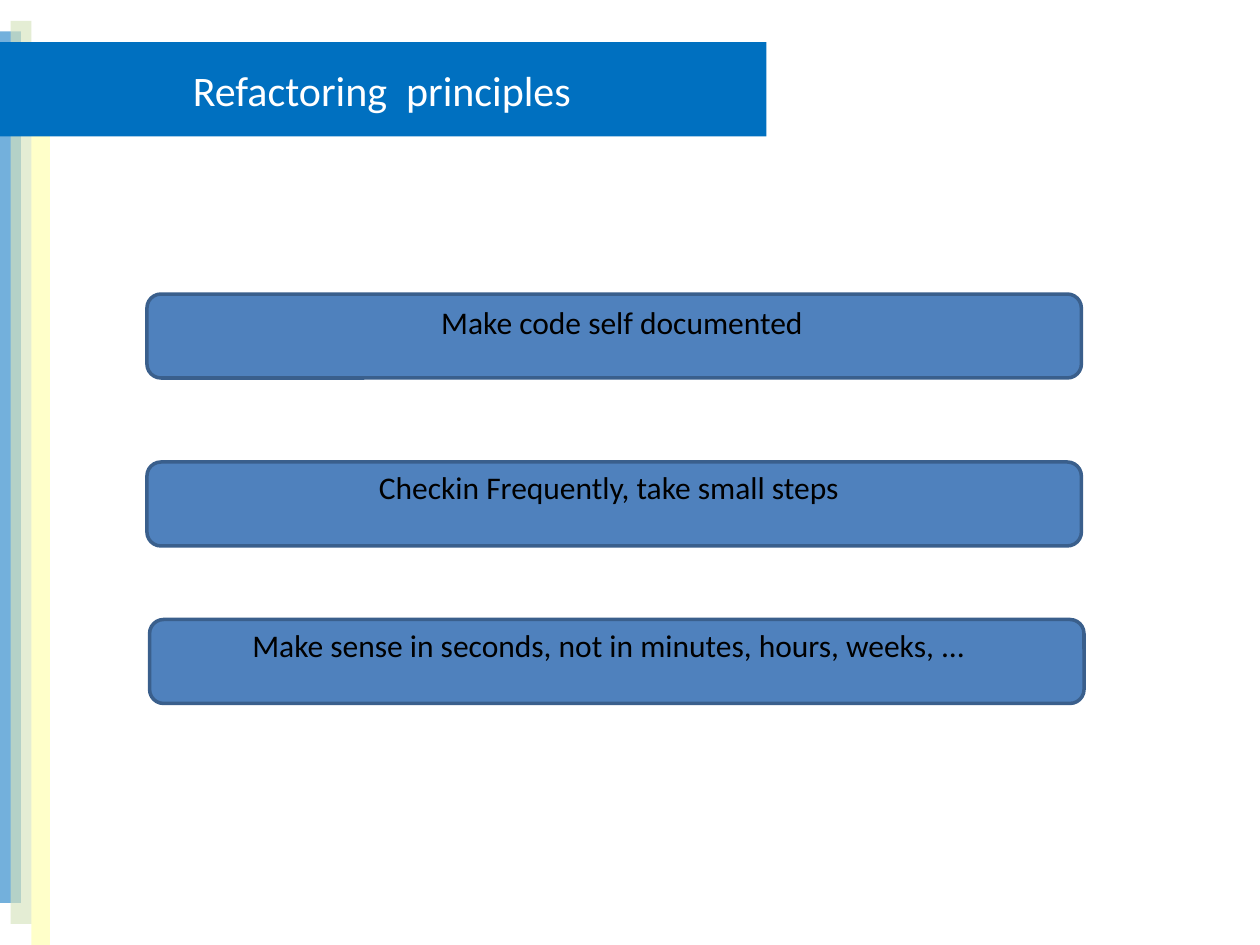
from lxml import etree
from pptx import Presentation
from pptx import util as u
from pptx.dml.color import RGBColor
from pptx.enum import shapes, text
from pptx.oxml.ns import qn

COLORS = {"blue": "0070C0", "green": "D7E4BD", "yellow": "FFFF00",
          "panel": "4F81BD", "edge": "3A5F8C", "white": "FFFFFF", "black": "000000"}
COLS, ROWS = 120, 90
W, H = u.Inches(10), u.Inches(7.5)
RECT = shapes.MSO_SHAPE.RECTANGLE
ROUND = shapes.MSO_SHAPE.ROUNDED_RECTANGLE


def rgb(name):
    return RGBColor.from_string(COLORS[name])


def place(box):
    x, y, w, h = box
    return [round(v) for v in (x * W / COLS, y * H / ROWS, w * W / COLS, h * H / ROWS)]


def add_block(parent, kind, box, fill, alpha=None, edge=None):
    sp = parent.add_shape(kind, *place(box))
    sp.shadow.inherit = False
    sp.fill.solid()
    sp.fill.fore_color.rgb = rgb(fill)
    if alpha:
        clr = sp._element.spPr.find(qn("a:solidFill"))[0]
        etree.SubElement(clr, qn("a:alpha")).set("val", str(alpha * 1000))
    if edge:
        sp.line.color.rgb = rgb(edge)
        sp.line.width = u.Pt(2)
    else:
        sp.line.fill.background()
    return sp


def write(sp, words, size, color, anchor):
    tf = sp.text_frame
    tf.word_wrap = True
    tf.vertical_anchor = anchor
    p = tf.paragraphs[0]
    p.alignment = text.PP_ALIGN.CENTER
    r = p.add_run()
    r.text = words
    for name, value in {"name": "Calibri", "size": u.Pt(size)}.items():
        setattr(r.font, name, value)
    r.font.color.rgb = rgb(color)


def side_bars(s, box):
    x, y, w, h = box
    bars = [(0, 1, 2, h - 5, "blue", 55),
            (1, 0, 2, h - 2, "green", 65),
            (3, 2, 1.75, h - 2, "yellow", 21)]
    for dx, dy, bw, bh, fill, alpha in bars:
        add_block(s.shapes, RECT, (x + dx, y + dy, bw, bh), fill, alpha)


def title_banner(s, box, words):
    sp = add_block(s.shapes, RECT, box, "blue")
    write(sp, words, 24, "white", text.MSO_ANCHOR.MIDDLE)


def principle(s, box, words, shift):
    x, y, w, h = box
    dx, dy = shift
    grp = s.shapes.add_group_shape()
    add_block(grp.shapes, ROUND, box, "panel", edge="edge")
    label = grp.shapes.add_textbox(*place((x + dx, y + dy, w + 1, 0.6 * h)))
    write(label, words, 18, "black", text.MSO_ANCHOR.TOP)
    label.text_frame.auto_size = text.MSO_AUTO_SIZE.SHAPE_TO_FIT_TEXT


def main():
    prs = Presentation()
    prs.slide_width, prs.slide_height = W, H
    s = prs.slides.add_slide(prs.slide_layouts[6])
    side_bars(s, (0, 2, 4.75, 88))
    title_banner(s, (-0.25, 4, 73.25, 9), "Refactoring  principles")
    principles = [
        (14, 28, "Make code self documented", (0.25, 0.25)),
        (14, 44, "Checkin Frequently, take small steps", (-1, 0)),
        (14.25, 59, "Make sense in seconds, not in minutes, hours, weeks, ...", (-1.25, 0))]
    for x, y, words, shift in principles:
        principle(s, (x, y, 89, 8), words, shift)
    prs.save("out.pptx")


if __name__ == "__main__":
    main()
